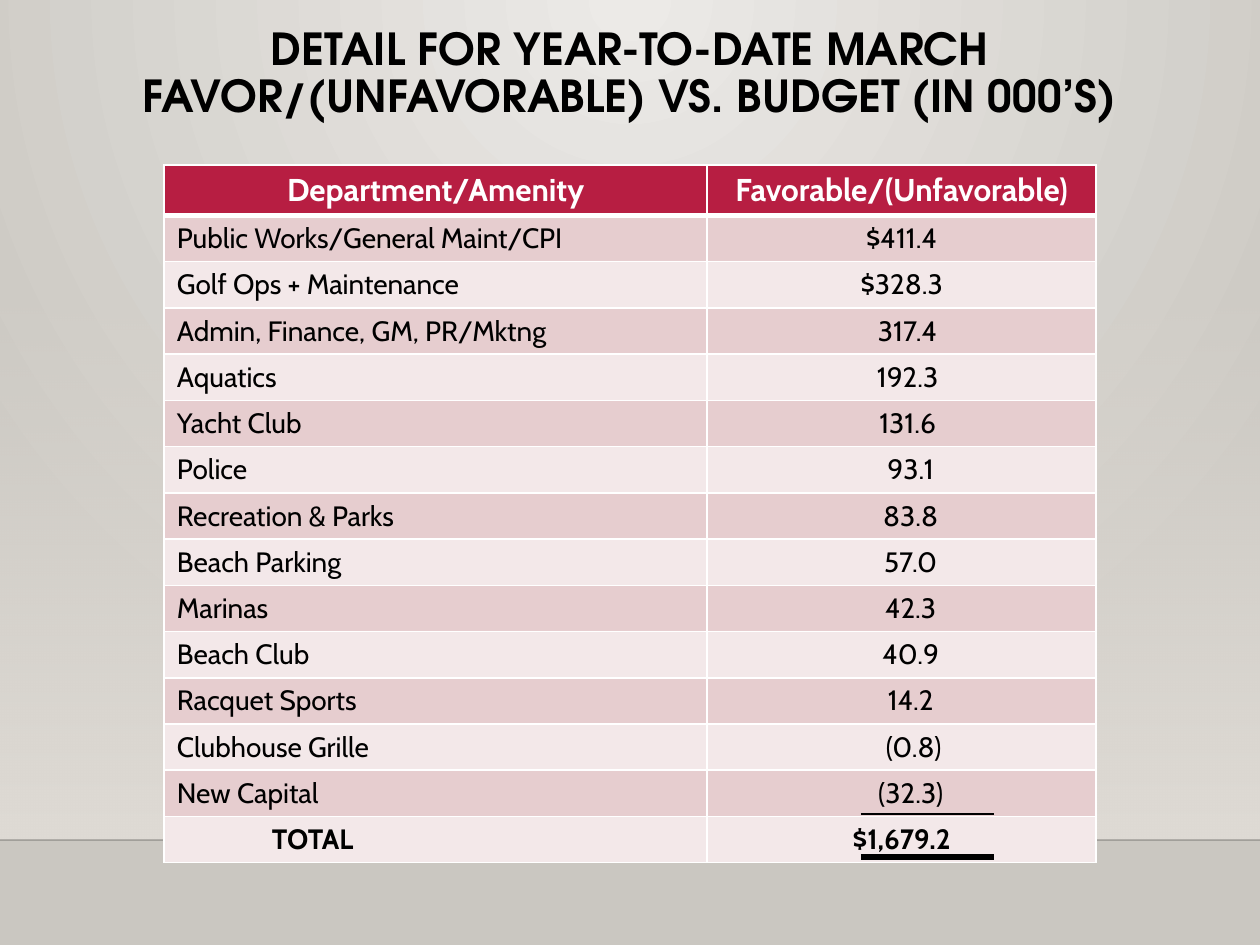
from typing import NamedTuple

from lxml import etree
from pptx import Presentation
from pptx.dml.color import RGBColor
from pptx.enum.shapes import MSO_CONNECTOR, MSO_SHAPE
from pptx.enum.text import MSO_ANCHOR, PP_ALIGN
from pptx.oxml.ns import qn
from pptx.util import Emu, Pt

RECT = MSO_SHAPE.RECTANGLE
STRAIGHT = MSO_CONNECTOR.STRAIGHT
TOP = MSO_ANCHOR.TOP
LEFT, CENTER = PP_ALIGN.LEFT, PP_ALIGN.CENTER
SCALE = 914400 / 126
INSET, SPACE = 13, 6
BLACK, WHITE, RED = "000000", "FFFFFF", "B71E42"
BANDS = ("E6CDCF", "F3E8E9")
BODY, HEAD = "Cabin", "TeX Gyre Adventor"


class Row(NamedTuple):
    """A table row, with the left padding of each cell in px."""
    name: str
    value: str
    pad: int = 0
    lead: int = 0
    bold: bool = False


class Rule(NamedTuple):
    """A level line from left to right, in px, with its width in points."""
    left: int
    right: int
    top: int
    width: float
    alpha: int = 100


class Stop(NamedTuple):
    """One gradient stop; position and alpha in percent."""
    pos: int
    color: str
    alpha: int = 100


ROWS = (
    Row("Public Works/General Maint/CPI", "$411.4"),
    Row("Golf Ops + Maintenance", "$328.3"),
    Row("Admin, Finance, GM, PR/Mktng", "317.4", 2 * SPACE),
    Row("Aquatics", "192.3", 2 * SPACE),
    Row("Yacht Club", "131.6", 2 * SPACE),
    Row("Police", "93.1", 3 * SPACE),
    Row("Recreation & Parks", "83.8", 3 * SPACE),
    Row("Beach Parking", "57.0", 3 * SPACE),
    Row("Marinas", "42.3", 3 * SPACE),
    Row("Beach Club", "40.9", 3 * SPACE),
    Row("Racquet Sports", "14.2", 3 * SPACE),
    Row("Clubhouse Grille", "(0.8)", 4 * SPACE),
    Row("New Capital", "(32.3)", 3 * SPACE),
    Row("TOTAL", "$1,679.2", 0, 95, True),
)
FLOOR = Rule(0, 1260, 840, 1, 20)
SUMS = (Rule(861, 994, 814, 1.25), Rule(861, 994, 857, 3))
TITLE = ("DETAIL FOR YEAR-TO-DATE MARCH",
         "FAVOR/(UNFAVORABLE) VS. BUDGET (IN 000’S)")


def px(size: int) -> Emu:
    """Turn px into EMU."""
    return Emu(round(size * SCALE))


def rgb(color: str) -> RGBColor:
    """Read a hex colour."""
    return RGBColor.from_string(color)


def add(parent, tag: str, **attrs):
    """Add an XML child with attributes."""
    return etree.SubElement(parent, qn(tag), {k: str(v) for k, v in attrs.items()})


def shade(owner, stops: tuple):
    """Fill the gradient inside an element with stops and return it."""
    grad = owner.find(".//" + qn("a:gradFill"))
    for child in list(grad):
        grad.remove(child)
    group = add(grad, "a:gsLst")
    for stop in stops:
        item = add(group, "a:gs", pos=stop.pos * 1000)
        color = add(item, "a:srgbClr", val=stop.color)
        add(color, "a:alpha", val=stop.alpha * 1000)
    return grad


def draw_back(slide) -> None:
    """Draw the radial background, the wall fade and the floor line."""
    slide.background.fill.gradient()
    grad = shade(slide.element.find(".//" + qn("p:bgPr")),
                 (Stop(0, "ECEAE7"), Stop(100, "CAC7C1")))
    ring = add(grad, "a:path", path="circle")
    add(ring, "a:fillToRect", l=43000, t=0, r=43000, b=100000)
    wall = slide.shapes.add_shape(RECT, px(0), px(277), px(1260), px(563))
    wall.shadow.inherit = False
    wall.line.fill.background()
    wall.fill.gradient()
    grad = shade(wall.element.spPr, (Stop(0, "DFDBD5", 0), Stop(100, "DFDBD5")))
    add(grad, "a:lin", ang=5400000, scaled=0)
    draw_rule(slide, FLOOR)


def draw_rule(slide, rule: Rule) -> None:
    """Draw a level black line."""
    line = slide.shapes.add_connector(
        STRAIGHT, px(rule.left), px(rule.top), px(rule.right), px(rule.top))
    line.line.color.rgb = rgb(BLACK)
    line.line.width = Pt(rule.width)
    if rule.alpha < 100:
        color = line.element.spPr.find(".//" + qn("a:srgbClr"))
        add(color, "a:alpha", val=rule.alpha * 1000)
    add(line.element.spPr, "a:effectLst")


def write(para, text: str, size: float, color: str, bold: bool, face: str) -> None:
    """Add one styled run."""
    run = para.add_run()
    run.text = text
    font = run.font
    font.size, font.bold, font.name = Pt(size), bold, face
    font.color.rgb = rgb(color)


def draw_title(slide) -> None:
    """Draw the two-line heading."""
    box = slide.shapes.add_textbox(px(113), px(21), px(1033), px(131))
    frame = box.text_frame
    frame.word_wrap = True
    frame.vertical_anchor = TOP
    para = frame.paragraphs[0]
    para.alignment, para.line_spacing = CENTER, 0.9
    write(para, TITLE[0], 25.2, BLACK, True, HEAD)
    para.add_line_break()
    write(para, TITLE[1], 25.2, BLACK, True, HEAD)


def edge(cell, top: int, base: int) -> None:
    """Give a cell white borders, with top and base widths in points."""
    props = cell._tc.get_or_add_tcPr()
    for side, width in (("L", 1), ("R", 1), ("T", top), ("B", base)):
        line = add(props, "a:ln" + side, w=Pt(width))
        add(add(line, "a:solidFill"), "a:srgbClr", val=WHITE)


def draw_table(slide) -> None:
    """Draw the table of departments."""
    count = len(ROWS) + 1
    table = slide.shapes.add_table(
        count, 2, px(164), px(165), px(932), px(50 + 46 * len(ROWS))).table
    table.columns[0].width, table.columns[1].width = px(543), px(389)
    head = Row("Department/Amenity", "Favorable/(Unfavorable)", bold=True)
    for i, row in enumerate((head, *ROWS)):
        table.rows[i].height = px(46 if i else 50)
        size, color = (16, BLACK) if i else (18, WHITE)
        fill = BANDS[(i - 1) % 2] if i else RED
        sides = (LEFT if i else CENTER, CENTER)
        parts = zip((row.name, row.value), (row.lead, row.pad), sides)
        for j, (text, pad, side) in enumerate(parts):
            cell = table.cell(i, j)
            edge(cell, 3 if i == 1 else 1, 1 if i else 3)
            cell.fill.solid()
            cell.fill.fore_color.rgb = rgb(fill)
            cell.margin_left = px(INSET + pad)
            para = cell.text_frame.paragraphs[0]
            para.alignment = side
            write(para, text, size, color, row.bold, BODY)


def main() -> None:
    """Build the slide."""
    deck = Presentation()
    deck.slide_width, deck.slide_height = px(1260), px(945)
    slide = deck.slides.add_slide(deck.slide_layouts[6])
    draw_back(slide)
    draw_title(slide)
    draw_table(slide)
    for rule in SUMS:
        draw_rule(slide, rule)
    deck.save("out.pptx")


if __name__ == "__main__":
    main()
